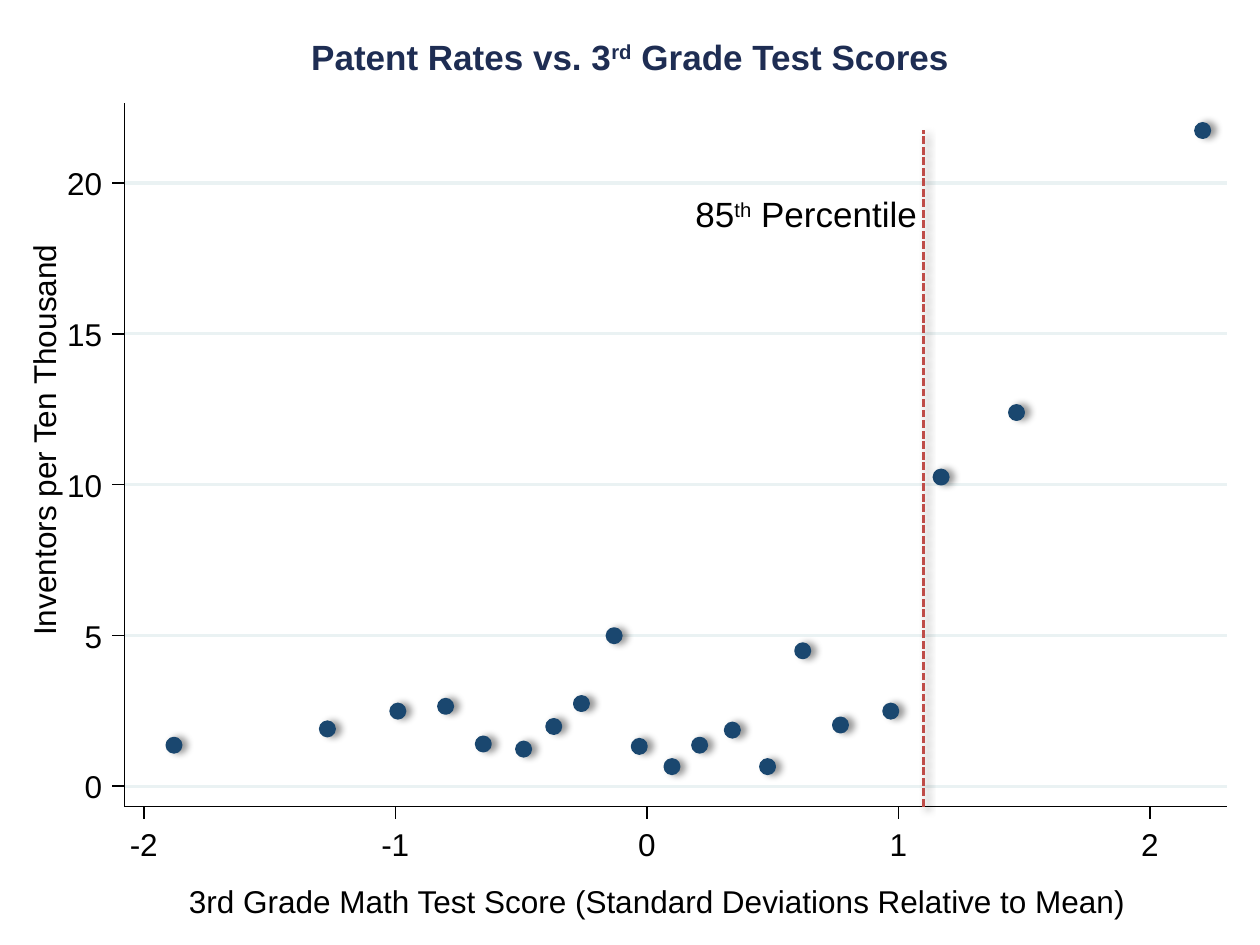
"""Build a slide that plots patent rates against third grade test scores."""
import lxml.etree
import pptx
import pptx.dml.color
import pptx.enum.dml
import pptx.enum.shapes
import pptx.enum.text
import pptx.oxml.ns
import pptx.util

Cm = pptx.util.Cm
Pt = pptx.util.Pt
RGBColor = pptx.dml.color.RGBColor
Align = pptx.enum.text.PP_ALIGN
qn = pptx.oxml.ns.qn

BLACK = RGBColor(0x00, 0x00, 0x00)
NAVY = RGBColor(0x1E, 0x2D, 0x53)
BLUE = RGBColor(0x1A, 0x47, 0x6F)
RED = RGBColor(0xBF, 0x4C, 0x48)
PALE = RGBColor(0xEA, 0xF2, 0xF3)

LEFT, RIGHT, TOP, BASE = 2.51, 24.74, 2.08, 16.26
ZERO_X, STEP_X = 13.04, 5.07
ZERO_Y, STEP_Y = 15.85, 0.608
TICK, DOT, HIGH = 0.25, 0.28, 0.76

POINTS = [
    (-1.88, 1.36), (-1.27, 1.9), (-0.99, 2.49), (-0.8, 2.65), (-0.65, 1.4),
    (-0.49, 1.23), (-0.37, 1.98), (-0.26, 2.74), (-0.13, 4.99), (-0.03, 1.32),
    (0.1, 0.65), (0.21, 1.36), (0.34, 1.86), (0.48, 0.65), (0.62, 4.49),
    (0.77, 2.03), (0.97, 2.49), (1.17, 10.25), (1.47, 12.39), (2.21, 21.74),
]

deck = pptx.Presentation()
deck.slide_width = Cm(25.4)
deck.slide_height = Cm(19.05)
slide = deck.slides.add_slide(deck.slide_layouts[5])
shapes = slide.shapes


def draw_line(x1, y1, x2, y2, color, width):
    line = shapes.add_connector(
        pptx.enum.shapes.MSO_CONNECTOR.STRAIGHT, Cm(x1), Cm(y1), Cm(x2), Cm(y2))
    line.line.color.rgb = color
    line.line.width = Pt(width)
    lxml.etree.SubElement(line._element.spPr, qn("a:effectLst"))
    return line


def put_text(box, parts, size, color=BLACK, align=Align.LEFT, bold=False, pad=(0, 0)):
    frame = box.text_frame
    frame.auto_size = pptx.enum.text.MSO_AUTO_SIZE.NONE
    frame.vertical_anchor = pptx.enum.text.MSO_ANCHOR.TOP
    frame.word_wrap = False
    frame.margin_left = frame.margin_right = Cm(pad[0])
    frame.margin_top = frame.margin_bottom = Cm(pad[1])
    para = frame.paragraphs[0]
    para.alignment = align
    for part in parts:
        run = para.add_run()
        run.text = part
        run.font.name = "Arial"
        run.font.size = Pt(size)
        run.font.bold = bold
        run.font.color.rgb = color
        if part in ("rd", "th"):
            run._r.get_or_add_rPr().set("baseline", "30000")


title = shapes.title
title.left, title.top, title.width, title.height = Cm(0), Cm(0.71), Cm(25.4), Cm(HIGH)
put_text(title, ["Patent Rates vs. 3", "rd", " Grade Test Scores"], 20, NAVY, Align.CENTER, True)
title.text_frame.word_wrap = True

rates = range(0, 25, 5)
for rate in rates:
    y = ZERO_Y - STEP_Y * rate
    draw_line(LEFT, y, RIGHT, y, PALE, 1.75)

shaded = []
for score, rate in POINTS:
    x = ZERO_X + STEP_X * score
    y = ZERO_Y - STEP_Y * rate
    dot = shapes.add_shape(
        pptx.enum.shapes.MSO_SHAPE.OVAL, Cm(x - DOT / 2), Cm(y - DOT / 2), Cm(DOT), Cm(DOT))
    dot.fill.solid()
    dot.fill.fore_color.rgb = BLUE
    dot.line.color.rgb = BLUE
    dot.line.width = Pt(1.75)
    dot.shadow.inherit = False
    shaded.append((dot, 0))

draw_line(LEFT, BASE, LEFT, TOP, BLACK, 0.88)
draw_line(LEFT, BASE, RIGHT, BASE, BLACK, 0.88)

for rate in rates:
    y = ZERO_Y - STEP_Y * rate
    draw_line(LEFT, y, LEFT - TICK, y, BLACK, 0.88)
    label = shapes.add_textbox(Cm(1.32), Cm(y - HIGH / 2), Cm(0.74), Cm(HIGH))
    put_text(label, [str(rate)], 18, align=Align.RIGHT)

for score in range(-2, 3):
    x = ZERO_X + STEP_X * score
    draw_line(x, BASE, x, BASE + TICK, BLACK, 0.88)
    label = shapes.add_textbox(Cm(x - 0.28), Cm(16.64), Cm(0.56), Cm(HIGH))
    put_text(label, [str(score)], 18, align=Align.CENTER)

name_y = shapes.add_textbox(Cm(-3.1), Cm(8.46), Cm(7.95), Cm(HIGH))
name_y.rotation = 270
put_text(name_y, ["Inventors per Ten Thousand"], 18)

mark_x = ZERO_X + STEP_X * 1.1
mark = draw_line(mark_x, BASE, mark_x, 2.62, RED, 1.5)
mark.line.dash_style = pptx.enum.dml.MSO_LINE.SQUARE_DOT
shaded.append((mark, 45))

name_x = shapes.add_textbox(Cm(3.81), Cm(17.78), Cm(19.05), Cm(HIGH))
put_text(name_x, ["3rd Grade Math Test Score (Standard Deviations Relative to Mean)"], 18)

note = shapes.add_textbox(Cm(13.77), Cm(3.76), Cm(5.08), Cm(1.12))
put_text(note, ["85", "th", " Percentile"], 20, pad=(0.25, 0.13))

for shape, angle in shaded:
    effect = shape._element.spPr.find(qn("a:effectLst"))
    shade = lxml.etree.SubElement(
        effect, qn("a:outerShdw"), blurRad=str(Pt(4)), dist=str(Pt(3)), dir=str(angle * 60000))
    tint = lxml.etree.SubElement(shade, qn("a:srgbClr"), val=str(BLACK))
    lxml.etree.SubElement(tint, qn("a:alpha"), val="40000")

deck.save("out.pptx")
